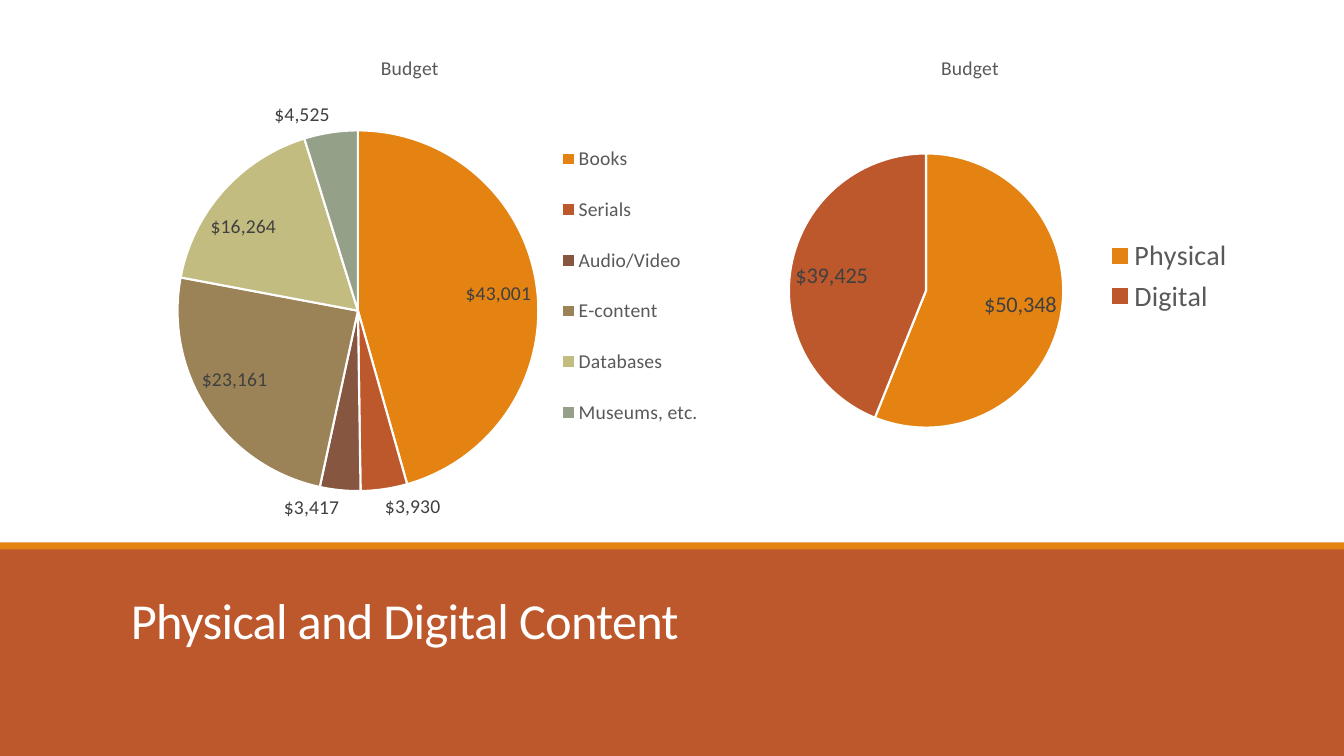
from lxml import etree
from pptx import Presentation
from pptx.chart.data import CategoryChartData
from pptx.dml.color import RGBColor
from pptx.enum.chart import XL_CHART_TYPE, XL_LABEL_POSITION, XL_LEGEND_POSITION
from pptx.enum.shapes import MSO_SHAPE
from pptx.enum.text import MSO_ANCHOR
from pptx.oxml.ns import qn
from pptx.util import Pt

PX = 9144  # 100 px to the inch
FONT = "Calibri"
PIE = XL_CHART_TYPE.PIE
BEST_FIT = XL_LABEL_POSITION.BEST_FIT
LEGEND_RIGHT = XL_LEGEND_POSITION.RIGHT
RECTANGLE = MSO_SHAPE.RECTANGLE
BOTTOM = MSO_ANCHOR.BOTTOM

WHITE = RGBColor(0xFF, 0xFF, 0xFF)
ORANGE = RGBColor(0xE4, 0x83, 0x12)
RUST = RGBColor(0xBD, 0x58, 0x2C)
BROWN = RGBColor(0x86, 0x56, 0x40)
TAN = RGBColor(0x9B, 0x83, 0x57)
KHAKI = RGBColor(0xC2, 0xBC, 0x80)
SAGE = RGBColor(0x94, 0xA0, 0x88)
GRAY = RGBColor(0x59, 0x59, 0x59)
DARK_GRAY = RGBColor(0x40, 0x40, 0x40)
SLICE_COLORS = [ORANGE, RUST, BROWN, TAN, KHAKI, SAGE]


def style_font(font, size, color):
    font.name = FONT
    font.size = Pt(size)
    font.bold = False
    font.color.rgb = color


def place_inside_chart(element, index, box, inner=False):
    """Give a plot area or legend a fixed box, in fractions of the chart."""
    for old_layout in element.findall(qn("c:layout")):
        element.remove(old_layout)
    layout = etree.Element(qn("c:layout"))
    manual = etree.SubElement(layout, qn("c:manualLayout"))
    settings = [("layoutTarget", "inner")] if inner else []
    settings += [("xMode", "edge"), ("yMode", "edge")]
    settings += zip("xywh", box)
    for name, value in settings:
        etree.SubElement(manual, qn(f"c:{name}")).set("val", str(value))
    element.insert(index, layout)


presentation = Presentation()
presentation.slide_width = 1333 * PX
presentation.slide_height = 750 * PX
slide = presentation.slides.add_slide(presentation.slide_layouts[6])

for top, height, color in [(542, 208, RUST), (538, 7, ORANGE)]:
    band = slide.shapes.add_shape(RECTANGLE, 0, top * PX, 1333 * PX, height * PX)
    band.shadow.inherit = False
    band.fill.solid()
    band.fill.fore_color.rgb = color
    band.line.fill.background()

budgets = [
    {
        "frame": (85, 35, 643, 497),
        "amounts": {"Books": 43001, "Serials": 3930, "Audio/Video": 3417,
                    "E-content": 23161, "Databases": 16264, "Museums, etc.": 4525},
        "label_size": 14,
        "legend_size": 14,
        "plot_box": (0.14, 0.19, 0.56, 0.72),
        "legend_box": (0.72, 0.17, 0.24, 0.66),
    },
    {
        "frame": (690, 35, 544, 478),
        "amounts": {"Physical": 50348, "Digital": 39425},
        "label_size": 16,
        "legend_size": 20,
        "plot_box": (0.17, 0.16, 0.5, 0.74),
        "legend_box": None,
    },
]

for budget in budgets:
    chart_data = CategoryChartData(number_format='"$"#,##0')
    chart_data.categories = list(budget["amounts"])
    chart_data.add_series("Budget", list(budget["amounts"].values()))
    frame = [length * PX for length in budget["frame"]]
    chart = slide.shapes.add_chart(PIE, *frame, chart_data).chart
    chart.font.name = FONT
    chart.font.size = Pt(10)

    chart.has_title = True
    title_run = chart.chart_title.text_frame.paragraphs[0].add_run()
    title_run.text = "Budget"
    style_font(title_run.font, 14, GRAY)

    chart.has_legend = True
    legend = chart.legend
    legend.position = LEGEND_RIGHT
    legend.include_in_layout = False
    style_font(legend.font, budget["legend_size"], GRAY)

    plot = chart.plots[0]
    plot.vary_by_categories = True
    series = plot.series[0]
    for index, color in zip(range(len(budget["amounts"])), SLICE_COLORS):
        slice_format = series.points[index].format
        slice_format.fill.solid()
        slice_format.fill.fore_color.rgb = color
        slice_format.line.color.rgb = WHITE
        slice_format.line.width = Pt(1.5)

    labels = series.data_labels
    labels.show_value = True
    labels.number_format = '"$"#,##0'
    labels.number_format_is_linked = False
    labels.position = BEST_FIT
    style_font(labels.font, budget["label_size"], DARK_GRAY)

    plot_area = chart.element.find(f".//{qn('c:plotArea')}")
    place_inside_chart(plot_area, 0, budget["plot_box"], inner=True)
    if budget["legend_box"]:
        legend_element = chart.element.find(f".//{qn('c:legend')}")
        place_inside_chart(legend_element, 1, budget["legend_box"])

title_box = slide.shapes.add_textbox(120 * PX, 555 * PX, 1106 * PX, 90 * PX)
text_frame = title_box.text_frame
text_frame.word_wrap = True
text_frame.vertical_anchor = BOTTOM
text_frame.margin_left = text_frame.margin_right = 10 * PX
text_frame.margin_top = text_frame.margin_bottom = 0
paragraph = text_frame.paragraphs[0]
paragraph.line_spacing = 0.85
run = paragraph.add_run()
run.text = "Physical and Digital Content"
style_font(run.font, 36, WHITE)
run.font._element.set("spc", "-50")

presentation.save("out.pptx")
